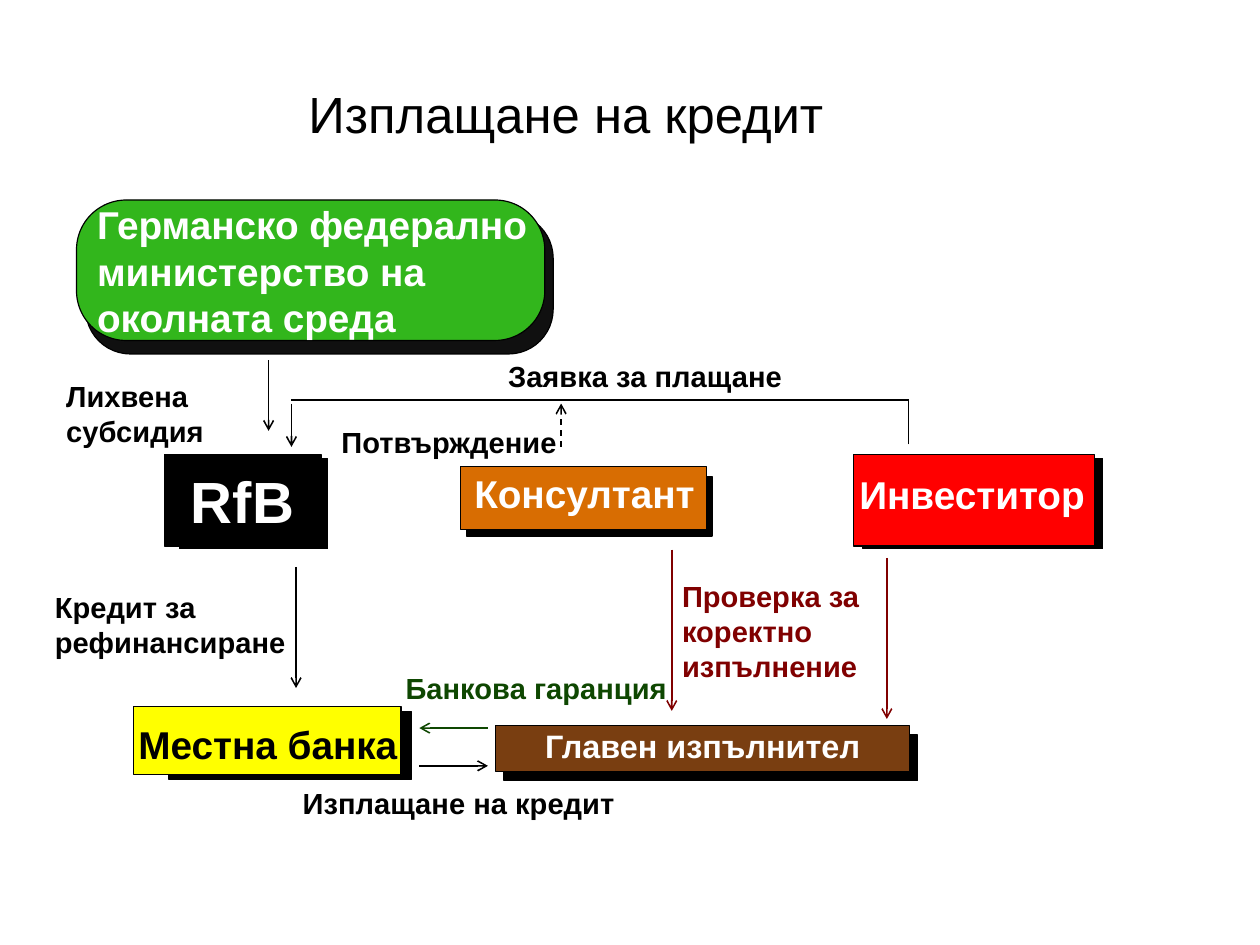
"""Diagram of how a subsidised loan is paid out."""
import dataclasses

import lxml.etree
import pptx
import pptx.dml.color
import pptx.enum.dml
import pptx.enum.shapes
import pptx.enum.text
import pptx.oxml.ns
import pptx.util

Pt = pptx.util.Pt
SHAPES = pptx.enum.shapes.MSO_SHAPE
ALIGN = pptx.enum.text.PP_ALIGN
ANCHOR = pptx.enum.text.MSO_ANCHOR


@dataclasses.dataclass(frozen=True)
class Theme:
    font: str = "Arial"
    black: str = "000000"
    white: str = "FFFFFF"
    soft_black: str = "101010"
    green: str = "32B61C"
    dark_green: str = "0E4701"
    red: str = "FF0000"
    dark_red: str = "800000"
    orange: str = "D86D02"
    brown: str = "793E11"
    yellow: str = "FFFF00"
    title: float = 32
    bank: float = 36.6
    actor: float = 24.4
    contractor: float = 20.4
    label: float = 18.3
    spacing: float = 1.0
    title_spacing: float = 0.93
    line: float = 1


class Diagram:
    def __init__(self, slide, theme):
        self.slide = slide
        self.theme = theme

    def color(self, value):
        return pptx.dml.color.RGBColor.from_string(value)

    def text(self, words, box, size, color, bold=True, inset=(0, 0), spacing=None):
        tf = self.slide.shapes.add_textbox(*map(Pt, box)).text_frame
        tf.word_wrap = True
        tf.margin_left = tf.margin_right = Pt(inset[0])
        tf.margin_top = tf.margin_bottom = Pt(inset[1])
        tf.text = words
        p = tf.paragraphs[0]
        p.line_spacing = spacing or self.theme.spacing
        font = p.runs[0].font
        font.name, font.size, font.bold = self.theme.font, Pt(size), bold
        font.color.rgb = self.color(color)
        return tf

    def title(self, words, box):
        t = self.theme
        tf = self.text(words, box, t.title, t.black, bold=False, spacing=t.title_spacing)
        tf.vertical_anchor = ANCHOR.MIDDLE
        tf.paragraphs[0].alignment = ALIGN.CENTER

    def label(self, words, box, color):
        self.text(words, box, self.theme.label, color, inset=(7.2, 3.6))

    def block(self, box, fill, radius=None):
        kind = SHAPES.RECTANGLE if radius is None else SHAPES.ROUNDED_RECTANGLE
        s = self.slide.shapes.add_shape(kind, *map(Pt, box))
        if radius is not None:
            s.adjustments[0] = radius
        s.shadow.inherit = False
        s.fill.solid()
        s.fill.fore_color.rgb = self.color(fill)
        s.line.color.rgb = self.color(self.theme.black)
        s.line.width = Pt(0)

    def actor(self, words, shadow, face, text_box, fill, size, color):
        self.block(shadow, self.theme.black)
        self.block(face, fill)
        self.text(words, text_box, size, color)

    def line(self, ends, color, arrow=True, dashed=False):
        kind = pptx.enum.shapes.MSO_CONNECTOR.STRAIGHT
        c = self.slide.shapes.add_connector(kind, *map(Pt, ends))
        c.line.color.rgb = self.color(color)
        c.line.width = Pt(self.theme.line)
        if dashed:
            c.line.dash_style = pptx.enum.dml.MSO_LINE.DASH
        qn = pptx.oxml.ns.qn
        if arrow:
            ln = c.line._get_or_add_ln()
            lxml.etree.SubElement(ln, qn("a:tailEnd"), type="arrow")
        lxml.etree.SubElement(c._element.spPr, qn("a:effectLst"))


def main():
    t = Theme()
    prs = pptx.Presentation()
    prs.slide_width, prs.slide_height = Pt(793.75), Pt(595.25)
    d = Diagram(prs.slides.add_slide(prs.slide_layouts[6]), t)

    d.title("Изплащане на кредит", (0, 24, 713.5, 98.5))

    d.block((54, 134.5, 294.5, 88.5), t.soft_black, 0.318)
    d.block((48.2, 126, 295, 88.5), t.green, 0.354)
    d.text("Германско федерално министерство на околната среда",
           (61.2, 126.7, 300.2, 103.7), t.actor, t.white)

    actors = [
        ("RfB", (113, 288.7, 93.6, 57), (103.7, 286.5, 98.6, 57.5),
         (120.2, 293, 75.6, 45.4), t.black, t.bank, t.white),
        ("Инвеститор", (543.6, 288.7, 151.2, 57), (537.8, 286.5, 152, 57.5),
         (541.4, 296.6, 148.3, 54), t.red, t.actor, t.white),
        ("Консултант", (293.8, 300.2, 154.8, 37.5), (290.1, 293.8, 154.8, 39.6),
         (298.8, 296, 146.2, 29.5), t.orange, t.actor, t.white),
        ("Главен изпълнител", (317.5, 463, 260.6, 28.8), (312.4, 457.2, 260.6, 28.8),
         (343.4, 457.2, 202.4, 24.5), t.brown, t.contractor, t.white),
        ("Местна банка", (106.5, 448, 152.6, 43), (84.2, 445, 168.5, 43),
         (87.2, 454.3, 165.6, 29.5), t.yellow, t.actor, t.black),
    ]
    for actor in actors:
        d.actor(*actor)

    labels = [
        ("Лихвена субсидия", (34.6, 234.7, 138.2, 52), t.black),
        ("Заявка за плащане", (313, 222, 274.5, 52), t.black),
        ("Потвърждение", (208, 263.5, 156.2, 29.5), t.black),
        ("Кредит за рефинансиране", (27.4, 368, 164.2, 52), t.black),
        ("Изплащане на кредит", (183.6, 491, 219, 29.5), t.black),
        ("Банкова гаранция", (248.4, 419, 181, 29.5), t.dark_green),
        ("Проверка за коректно изпълнение", (422.6, 360.7, 136, 74), t.dark_red),
    ]
    for label in labels:
        d.label(*label)

    arrows = [
        ((169.2, 226.8, 169.2, 271.4), t.black),
        ((183.6, 254.2, 183.6, 281.5), t.black),
        ((186.5, 357.1, 186.5, 433.4), t.black),
        ((264.2, 482.4, 307.4, 482.4), t.black),
        ((307.4, 458.6, 264.2, 458.6), t.dark_green),
        ((423.2, 346.3, 423.2, 447.8), t.dark_red),
        ((558.7, 351.4, 558.7, 452.9), t.dark_red),
    ]
    for ends, color in arrows:
        d.line(ends, color)
    d.line((353.5, 281.5, 353.5, 254.2), t.black, dashed=True)
    d.line((572.4, 280, 572.4, 252), t.black, arrow=False)
    d.line((572.4, 252, 183.6, 252), t.black, arrow=False)

    prs.save("out.pptx")


if __name__ == "__main__":
    main()
